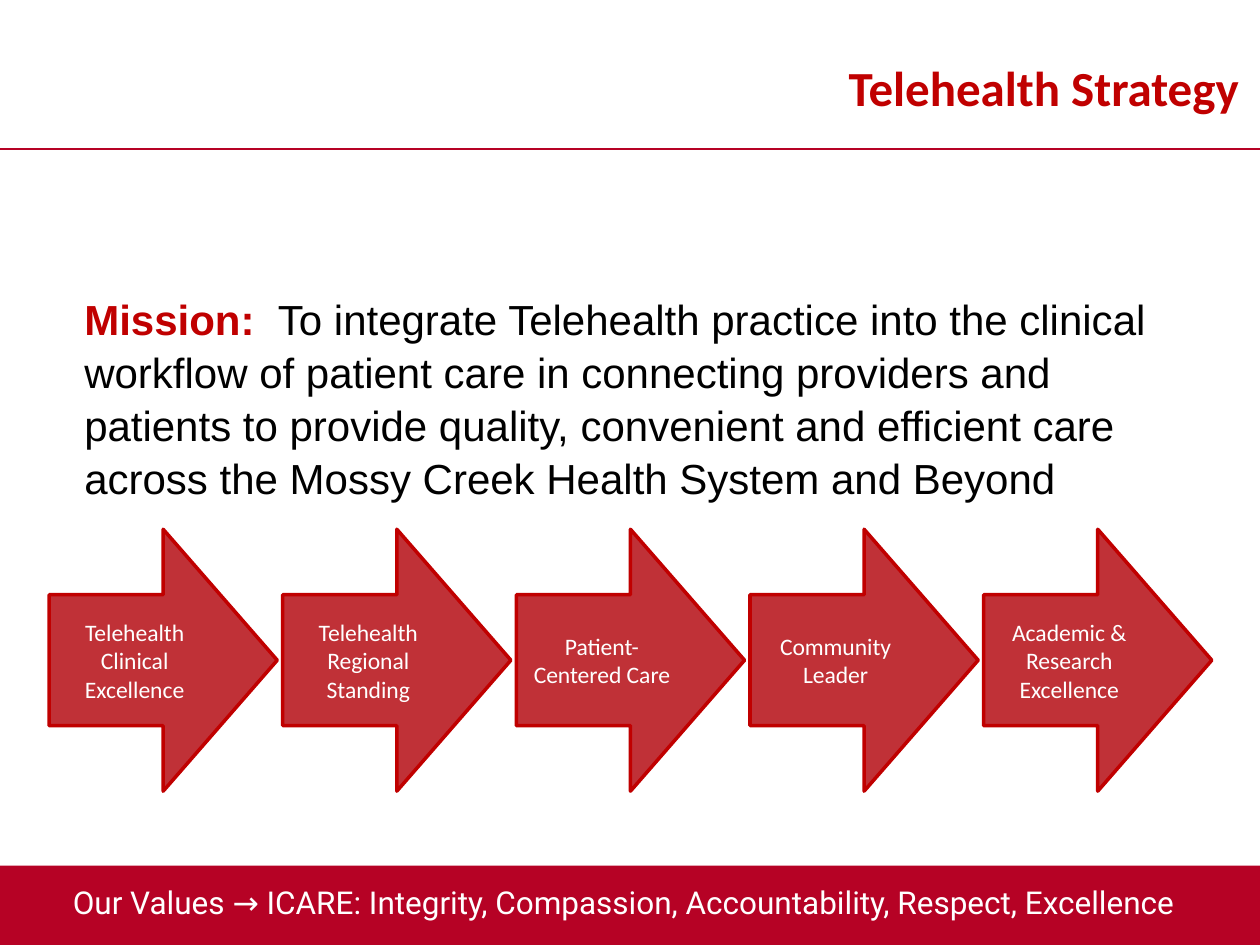
from lxml.etree import SubElement
from pptx import Presentation
from pptx.dml.color import RGBColor
from pptx.enum.shapes import MSO_CONNECTOR, MSO_SHAPE
from pptx.enum.text import MSO_ANCHOR, PP_ALIGN
from pptx.oxml.ns import qn
from pptx.util import Cm, Pt

PAGE_WIDTH = 25.4
CRIMSON = "B60225"
RED = "C00000"
WHITE = "FFFFFF"
GOALS = [
    "Telehealth Clinical Excellence",
    "Telehealth Regional Standing",
    "Patient-Centered Care",
    "Community Leader",
    "Academic & Research Excellence",
]
MISSION = (
    "To integrate Telehealth practice into the clinical workflow of patient care "
    "in connecting providers and patients to provide quality, convenient and "
    "efficient care across the Mossy Creek Health System and Beyond"
)
VALUES = "Our Values → ICARE: Integrity, Compassion, Accountability, Respect, Excellence"


def colour(value):
    return RGBColor.from_string(value)


def style_paragraph(paragraph, font, size, shade, align, bold=False):
    paragraph.alignment = align
    paragraph.font.name = font
    paragraph.font.size = Pt(size)
    paragraph.font.bold = bold
    paragraph.font.color.rgb = colour(shade)


def add_text_box(page, left, top, width, height, anchor=MSO_ANCHOR.TOP):
    box = page.shapes.add_textbox(Cm(left), Cm(top), Cm(width), Cm(height))
    frame = box.text_frame
    frame.word_wrap = True
    frame.vertical_anchor = anchor
    return frame


def add_filled_shape(page, kind, left, top, width, height, fill):
    shape = page.shapes.add_shape(kind, Cm(left), Cm(top), Cm(width), Cm(height))
    shape.shadow.inherit = False
    shape.fill.solid()
    shape.fill.fore_color.rgb = colour(fill)
    shape.line.fill.background()
    return shape


def add_rule(page, top):
    rule = page.shapes.add_connector(
        MSO_CONNECTOR.STRAIGHT, Cm(0), Cm(top), Cm(PAGE_WIDTH), Cm(top)
    )
    rule.line.color.rgb = colour(CRIMSON)
    rule.line.width = Pt(1)
    SubElement(rule._element.spPr, qn("a:effectLst"))


def add_title(page):
    frame = add_text_box(page, 4.01, 0.86, 21.21, 1.78, MSO_ANCHOR.MIDDLE)
    paragraph = frame.paragraphs[0]
    paragraph.text = "Telehealth Strategy"
    style_paragraph(paragraph, "Calibri", 28, RED, PP_ALIGN.RIGHT, bold=True)


def add_mission(page):
    paragraph = add_text_box(page, 1.45, 5.75, 22.96, 4.37).paragraphs[0]
    paragraph.line_spacing = 1.05
    label = paragraph.add_run()
    label.text = "Mission:  "
    label.font.bold = True
    label.font.color.rgb = colour(RED)
    paragraph.add_run().text = MISSION
    style_paragraph(paragraph, "Arial", 24, "000000", PP_ALIGN.LEFT)


def add_goal_arrow(page, left, text):
    arrow = add_filled_shape(
        page, MSO_SHAPE.RIGHT_ARROW, left, 10.67, 4.6, 5.28, "C03137"
    )
    arrow.line.color.rgb = colour(RED)
    arrow.line.width = Pt(2)
    frame = arrow.text_frame
    frame.word_wrap = True
    frame.vertical_anchor = MSO_ANCHOR.MIDDLE
    frame.text = text
    style_paragraph(frame.paragraphs[0], "Calibri", 13.5, WHITE, PP_ALIGN.CENTER)


def add_values(page):
    frame = add_text_box(page, 0, 17.68, PAGE_WIDTH, 1.37)
    frame.margin_left = 0
    paragraph = frame.paragraphs[0]
    paragraph.text = VALUES
    style_paragraph(paragraph, "Roboto", 18, WHITE, PP_ALIGN.CENTER)


def main():
    deck = Presentation()
    deck.slide_width = Cm(PAGE_WIDTH)
    deck.slide_height = Cm(19.05)
    page = deck.slides.add_slide(deck.slide_layouts[6])
    add_filled_shape(page, MSO_SHAPE.RECTANGLE, 0, 17.45, PAGE_WIDTH, 1.6, CRIMSON)
    add_rule(page, 3.01)
    add_mission(page)
    for index, goal in enumerate(GOALS):
        add_goal_arrow(page, 0.99 + index * 4.71, goal)
    add_values(page)
    add_title(page)
    deck.save("out.pptx")


if __name__ == "__main__":
    main()
